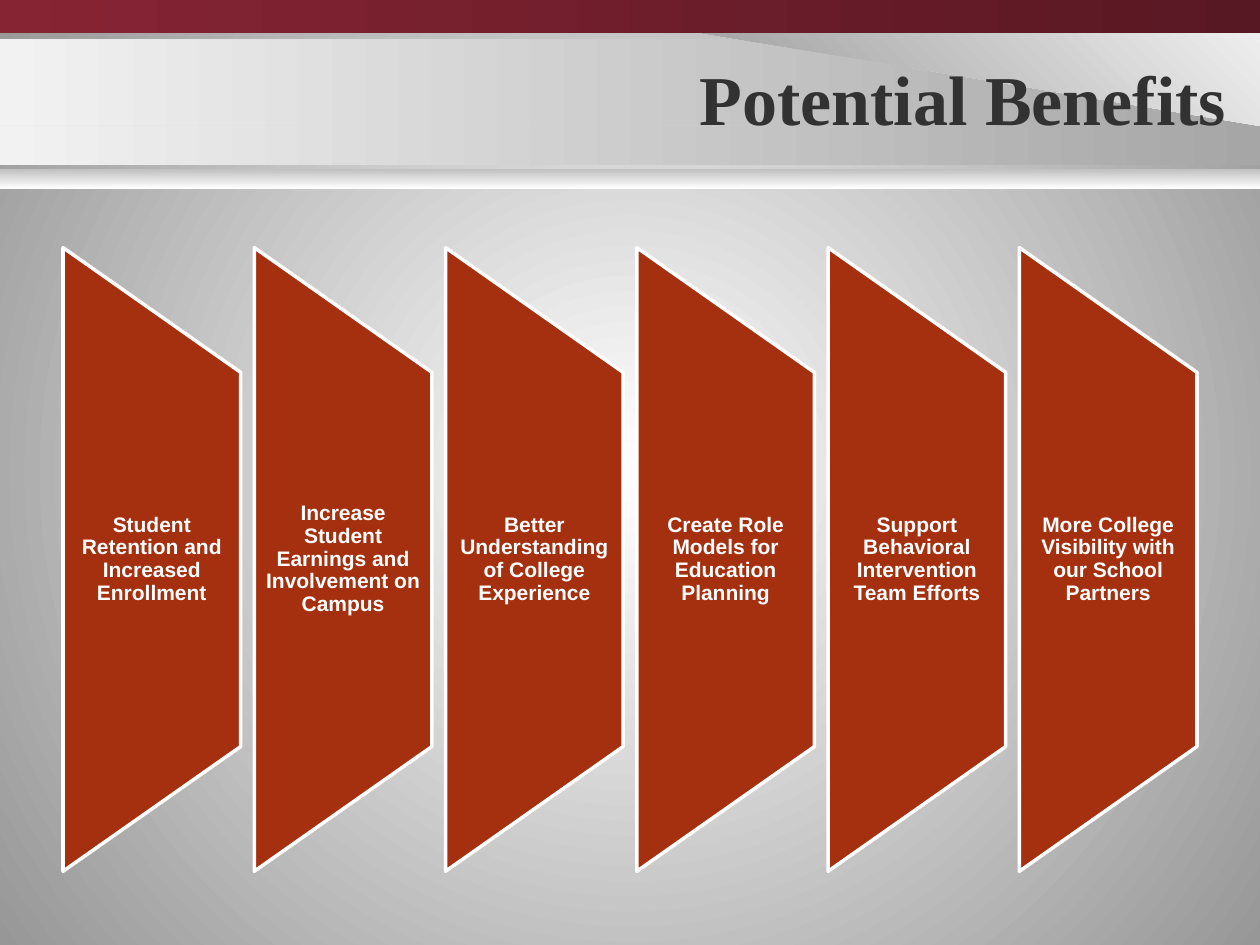
"""Build the Potential Benefits slide with a banner and six tapered columns."""
import lxml.etree
import pptx
import pptx.dml.color
import pptx.enum.shapes
import pptx.enum.text
import pptx.oxml
import pptx.oxml.ns
import pptx.util

INCH = pptx.util.Inches(1)
SHAPES = pptx.enum.shapes.MSO_SHAPE
ALIGN = pptx.enum.text.PP_ALIGN


def paint(fill, *colours, angle=0):
    """Fill with one colour, or with a two-colour gradient."""
    shades = [pptx.dml.color.RGBColor.from_string(colour) for colour in colours]
    if len(shades) == 1:
        fill.solid()
        fill.fore_color.rgb = shades[0]
        return
    fill.gradient()
    fill.gradient_angle = angle
    for stop, shade in zip(fill.gradient_stops, shades):
        stop.color.rgb = shade


def write(left, top, width, height, text, font, size, colour, align):
    """Add a bold, vertically centred text box."""
    box = page.shapes.add_textbox(*(round(n * INCH) for n in (left, top, width, height)))
    frame = box.text_frame
    frame.word_wrap = True
    frame.vertical_anchor = pptx.enum.text.MSO_ANCHOR.MIDDLE
    frame.text = text
    para = frame.paragraphs[0]
    para.alignment = align
    span = para.runs[0]
    span.font.name, span.font.size, span.font.bold = font, pptx.util.Pt(size), True
    paint(span.font.fill, colour)
    return frame


deck = pptx.Presentation()
deck.slide_width, deck.slide_height = 10 * INCH, round(7.5 * INCH)
page = deck.slides.add_slide(deck.slide_layouts[6])

paint(page.background.fill, "FFFFFF", "979797")
backdrop = page.element.find(".//" + pptx.oxml.ns.qn("a:gradFill"))
backdrop.remove(backdrop.find(pptx.oxml.ns.qn("a:lin")))
radial = lxml.etree.SubElement(backdrop, pptx.oxml.ns.qn("a:path"), {"path": "circle"})
centre = dict.fromkeys("ltrb", "50000")
lxml.etree.SubElement(radial, pptx.oxml.ns.qn("a:fillToRect"), centre)

banner = [
    ([(0, 0.31), (10, 0.31), (10, 1.31), (0, 1.31)], ["F2F2F2", "A6A6A6"], 0),
    ([(3.93, 0.31), (10, 0.67), (10, 0.31)], ["F2F2F2", "808080"], 225),
    ([(0, 0.81), (6.43, 1.3), (0, 1.3)], ["D9D9D9"], 0),
    ([(0, 0), (10, 0), (10, 0.26), (0, 0.26)], ["872434", "581823"], 0),
    ([(0, 1.34), (10, 1.34), (10, 1.5), (0, 1.5)], ["BFBFBF", "FFFFFF"], 270),
]
for points, colours, angle in banner:
    if len(points) == 4:
        (left, top), (right, bottom) = points[0], points[2]
        edges = (left, top, right - left, bottom - top)
        panel = page.shapes.add_shape(SHAPES.RECTANGLE, *(round(n * INCH) for n in edges))
    else:
        builder = page.shapes.build_freeform(*points[0], scale=INCH)
        builder.add_line_segments(points[1:], close=True)
        panel = builder.convert_to_shape()
    panel.shadow.inherit = False
    panel.line.fill.background()
    paint(panel.fill, *colours, angle=angle)

write(2.58, 0.3, 7.25, 0.95, "Potential Benefits", "Times New Roman", 40, "323232", ALIGN.RIGHT)

benefits = [
    "Student Retention and Increased Enrollment",
    "Increase Student Earnings and Involvement on Campus",
    "Better Understanding of College Experience",
    "Create Role Models for Education Planning",
    "Support Behavioral Intervention Team Efforts",
    "More College Visibility with our School Partners",
]
margin, middle, width, length = 0.5, 4.44, 1.41, 4.95
pitch = (10 - 2 * margin - width) / (len(benefits) - 1)
for column, benefit in enumerate(benefits):
    left = margin + column * pitch
    frame_edges = (left + (width - length) / 2, middle - width / 2, length, width)
    column_shape = page.shapes.add_shape(
        SHAPES.FLOWCHART_MANUAL_OPERATION, *(round(n * INCH) for n in frame_edges))
    column_shape.rotation = 270
    column_shape.shadow.inherit = False
    paint(column_shape.fill, "A5300F")
    paint(column_shape.line.fill, "FFFFFF")
    column_shape.line.width = pptx.util.Pt(2)
    label_height = length * 0.6
    frame = write(left, middle - label_height / 2, width, label_height,
                  benefit, "Arial", 12, "FFFFFF", ALIGN.CENTER)
    frame.margin_left = frame.margin_right = round(0.08 * INCH)
    frame.margin_top = frame.margin_bottom = 0
    frame.paragraphs[0].line_spacing = 0.9

deck.save("out.pptx")
